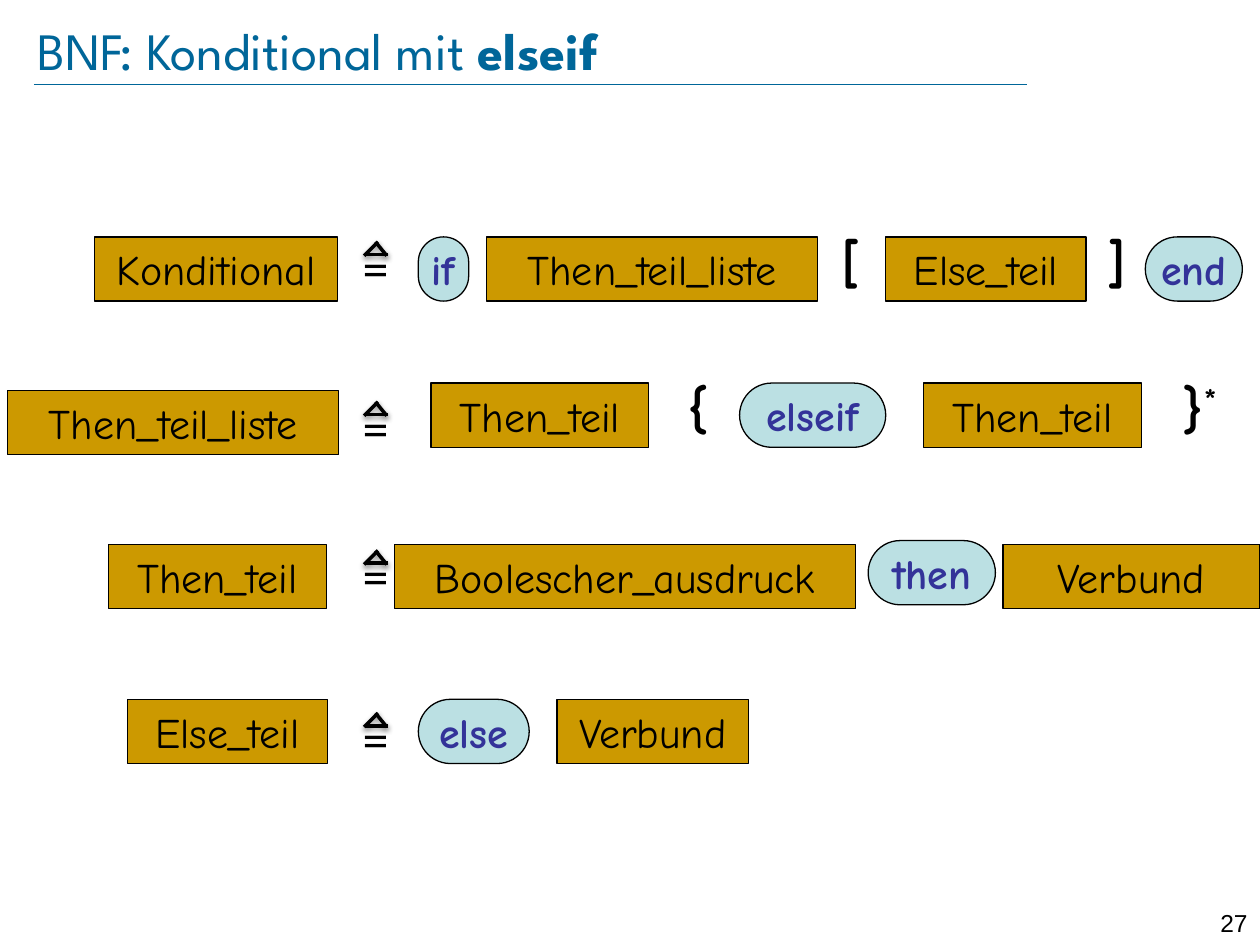
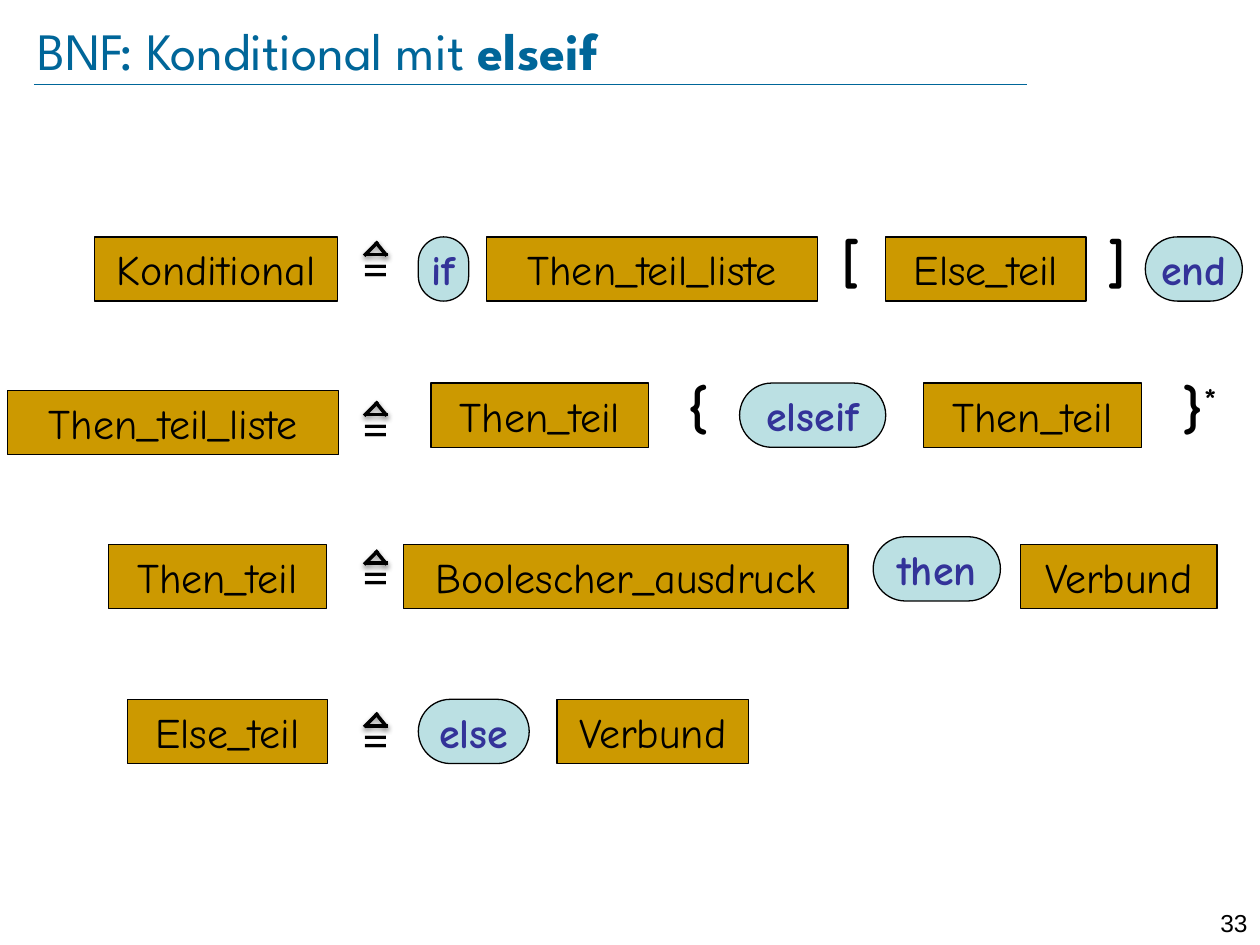
from lxml import etree
from pptx import Presentation
from pptx import util as u
from pptx.dml.color import RGBColor
from pptx.enum import shapes, text
from pptx.oxml.ns import qn

BLACK, TITLE_BLUE, OCHRE, PALE_BLUE, INDIGO = "000000", "006699", "CC9900", "BBE0E3", "333399"
BOX_HEIGHT = 0.51
SIGN_LEFT = 2.77
SIGN_STROKES = [(0.21, 0.08, 0.3, 0.19), (0.23, 0.08, 0.12, 0.19), (0.31, 0.18, 0.13, 0.18)]


def color(value):
    return RGBColor.from_string(value)


class GrammarDeck:
    body_font = "Comic Neue"

    def __init__(self):
        self.presentation = Presentation()
        self.presentation.slide_width = u.Inches(10)
        self.presentation.slide_height = u.Inches(7.5)
        self.slide = None

    def new_slide(self, page):
        self.slide = self.presentation.slides.add_slide(self.presentation.slide_layouts[6])
        self.line(self.slide.shapes, 0.27, 0.67, 8.15, 0.67, TITLE_BLUE, 0.25)
        self.label(self.slide.shapes, str(page), 9.45, 7.16, 0.55, 0.24, 14, "Arial",
                   align=text.PP_ALIGN.RIGHT)
        title = self.label(self.slide.shapes, "BNF: Konditional mit ", 0.3, 0.14, 8.91, 0.5,
                           30, "League Spartan", TITLE_BLUE)
        frame = title.text_frame
        frame.vertical_anchor = text.MSO_ANCHOR.MIDDLE
        frame.margin_left = frame.margin_right = frame.margin_top = frame.margin_bottom = 0
        keyword = frame.paragraphs[0].add_run()
        keyword.text = "elseif"
        keyword.font.bold = True

    def set_text(self, shape, content, size, font, ink, bold, align, wrap):
        shape.text_frame.word_wrap = wrap
        paragraph = shape.text_frame.paragraphs[0]
        paragraph.add_run().text = content
        paragraph.alignment = align
        paragraph.font.size = u.Pt(size)
        paragraph.font.name = font
        paragraph.font.color.rgb = color(ink)
        if bold:
            paragraph.font.bold = True

    def label(self, parent, content, left, top, width, height, size, font, ink=BLACK,
              bold=False, align=text.PP_ALIGN.LEFT, wrap=True):
        shape = parent.add_textbox(*map(u.Inches, (left, top, width, height)))
        self.set_text(shape, content, size, font, ink, bold, align, wrap)
        return shape

    def line(self, parent, x1, y1, x2, y2, ink, weight, shadow=False):
        connector = parent.add_connector(shapes.MSO_CONNECTOR.STRAIGHT,
                                         *map(u.Inches, (x1, y1, x2, y2)))
        connector.line.color.rgb = color(ink)
        connector.line.width = u.Pt(weight)
        effects = etree.SubElement(connector._element.spPr, qn("a:effectLst"))
        if shadow:
            outer = etree.SubElement(effects, qn("a:outerShdw"), blurRad="40000", dist="20000",
                                     dir="5400000", rotWithShape="0")
            shade = etree.SubElement(outer, qn("a:srgbClr"), val=BLACK)
            etree.SubElement(shade, qn("a:alpha"), val="38000")

    def box(self, kind, content, left, top, width, fill, ink, bold):
        shape = self.slide.shapes.add_shape(kind, *map(u.Inches, (left, top, width, BOX_HEIGHT)))
        shape.shadow.inherit = False
        shape.fill.solid()
        shape.fill.fore_color.rgb = color(fill)
        shape.line.color.rgb = color(BLACK)
        shape.line.width = u.Pt(0.75)
        shape.text_frame.vertical_anchor = text.MSO_ANCHOR.MIDDLE
        self.set_text(shape, content, 24, self.body_font, ink, bold, text.PP_ALIGN.CENTER, False)
        return shape

    def nonterminal(self, content, left, top, width):
        self.box(shapes.MSO_SHAPE.RECTANGLE, content, left, top, width, OCHRE, BLACK, False)

    def terminal(self, content, left, top, width):
        shape = self.box(shapes.MSO_SHAPE.ROUNDED_RECTANGLE, content, left, top, width,
                         PALE_BLUE, INDIGO, True)
        shape.adjustments[0] = 0.5

    def bracket(self, content, left, row_top, width, exponent=None):
        shape = self.label(self.slide.shapes, content, left, row_top - 0.13, width, 0.64, 32,
                           self.body_font, bold=True, align=text.PP_ALIGN.CENTER, wrap=False)
        if exponent:
            run = shape.text_frame.paragraphs[0].add_run()
            run.text = exponent
            run._r.get_or_add_rPr().set("baseline", "30000")

    def defined_as(self, top):
        group = self.slide.shapes.add_group_shape()
        self.label(group.shapes, "=", SIGN_LEFT, top, 0.42, 0.57, 28, "Lato")
        for x1, y1, x2, y2 in SIGN_STROKES:
            self.line(group.shapes, SIGN_LEFT + x1, top + y1, SIGN_LEFT + x2, top + y2,
                      BLACK, 2, shadow=True)

    def conditional_grammar(self, page, expression, then, compound):
        self.new_slide(page)

        row = 1.88
        self.nonterminal("Konditional", 0.75, row, 1.93)
        self.terminal("if", 3.32, row, 0.4)
        self.nonterminal("Then_teil_liste", 3.86, row, 2.63)
        self.bracket("[", 6.57, row, 0.37)
        self.nonterminal("Else_teil", 7.03, row, 1.59)
        self.bracket("]", 8.68, row, 0.37)
        self.terminal("end", 9.09, row, 0.77)

        row = 3.04
        self.nonterminal("Then_teil_liste", 0.06, 3.1, 2.63)
        self.nonterminal("Then_teil", 3.42, row, 1.73)
        self.bracket("{", 5.35, row, 0.38)
        self.terminal("elseif", 5.87, row, 1.16)
        self.nonterminal("Then_teil", 7.33, row, 1.73)
        self.bracket("}", 9.26, row, 0.52, exponent="*")

        row = 4.32
        self.nonterminal("Then_teil", 0.86, row, 1.73)
        self.nonterminal("Boolescher_ausdruck", expression[0], row, expression[1])
        self.terminal("then", *then, 1.01)
        self.nonterminal("Verbund", compound[0], row, compound[1])

        row = 5.55
        self.nonterminal("Else_teil", 1.01, row, 1.59)
        self.terminal("else", 3.32, row, 0.88)
        self.nonterminal("Verbund", 4.42, row, 1.52)

        for sign_top in (1.84, 3.11, 4.29, 5.58):
            self.defined_as(sign_top)


def main():
    deck = GrammarDeck()
    deck.conditional_grammar(27, expression=(3.13, 3.66), then=(6.89, 4.29), compound=(7.96, 2.04))
    deck.conditional_grammar(33, expression=(3.2, 3.53), then=(6.93, 4.26), compound=(8.1, 1.56))
    deck.presentation.save("out.pptx")


if __name__ == "__main__":
    main()
